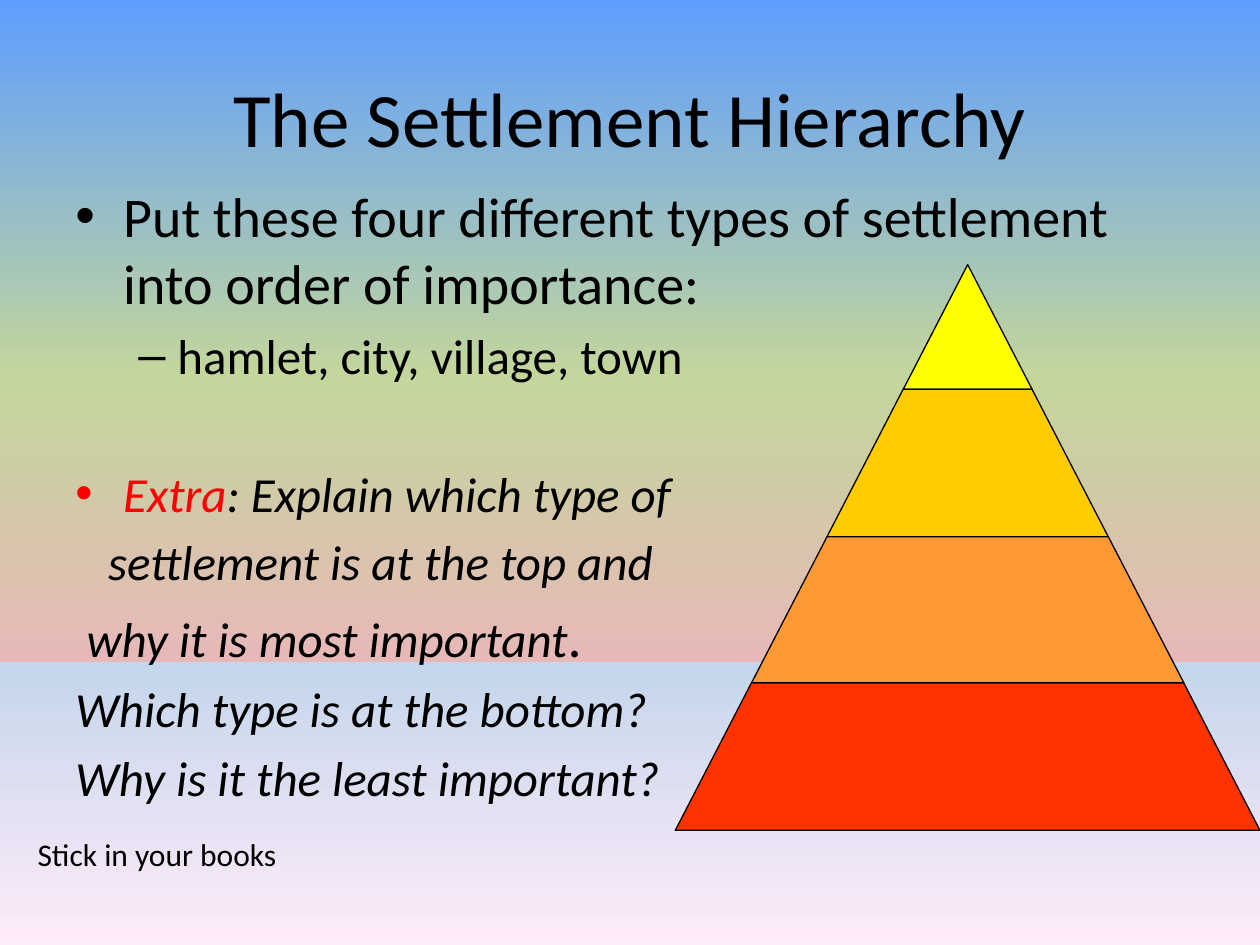
"""Build the settlement hierarchy slide with its task list and pyramid."""
from dataclasses import dataclass
from itertools import pairwise

from pptx import Presentation
from pptx.dml.color import RGBColor
from pptx.enum.text import MSO_ANCHOR, PP_ALIGN
from pptx.oxml.ns import qn
from pptx.util import Inches, Pt
from lxml.etree import SubElement


@dataclass(frozen=True)
class Theme:
    font: str = "Calibri"
    bullet_font: str = "Arial"
    ink: str = "000000"
    accent: str = "FF0000"
    title: int = 44
    body: int = 32
    sub: int = 28
    note: int = 18
    line: float = 0.75
    sky: tuple = ((0, "5E9EFF"), (40, "C3D69B"), (70, "E6B9B8"),
                  (70, "C4D6EB"), (100, "FFEBFA"))
    tiers: tuple = ("FFFF00", "FFCC00", "FF9933", "FF3300")


T = Theme()


@dataclass(frozen=True)
class Run:
    text: str
    size: int = T.sub
    italic: bool = False
    color: str = T.ink


@dataclass(frozen=True)
class Para:
    runs: tuple[Run, ...]
    bullet: str = ""
    level: int = 0
    margin: float = 0.38
    indent: float = -0.38
    before: float = 0.2 * T.sub


BODY = (
    Para((Run("Put these four different types of settlement into order of importance:",
              T.body),), "•", before=0.2 * T.body),
    Para((Run("hamlet, city, village, town"),), "–", 1, 0.81, -0.31),
    Para((Run("Extra", italic=True, color=T.accent),
          Run(": Explain which type of", italic=True)), "•", before=45),
    Para((Run("settlement is at the top and", italic=True),), indent=-0.12),
    Para((Run("why it is most important", italic=True), Run(".", T.body)),
         indent=-0.29, before=0.2 * T.body),
    Para((Run("Which type is at the bottom?", italic=True),)),
    Para((Run("Why is it the least important?", italic=True),)),
)


def paint_background(s) -> None:
    fill = s.background.fill
    fill.gradient()
    fill.gradient_angle = 270
    stops = s._element.find(".//" + qn("a:gsLst"))
    for stop in list(stops):
        stops.remove(stop)
    for pos, color in T.sky:
        gs = SubElement(stops, qn("a:gs"), pos=str(pos * 1000))
        SubElement(gs, qn("a:srgbClr"), val=color)


def add_text_frame(s, left: float, top: float, width: float, height: float):
    box = s.shapes.add_textbox(Inches(left), Inches(top), Inches(width), Inches(height))
    tf = box.text_frame
    tf.word_wrap = True
    return tf


def add_run(p, run: Run) -> None:
    r = p.add_run()
    r.text = run.text
    r.font.name = T.font
    r.font.size = Pt(run.size)
    r.font.italic = run.italic
    r.font.color.rgb = RGBColor.from_string(run.color)


def write_para(p, para: Para) -> None:
    p.level = para.level
    p.space_before = Pt(para.before)
    pPr = p._p.get_or_add_pPr()
    pPr.set("marL", str(Inches(para.margin)))
    pPr.set("indent", str(Inches(para.indent)))
    if para.bullet:
        SubElement(pPr, qn("a:buFont"), typeface=T.bullet_font)
        SubElement(pPr, qn("a:buChar"), char=para.bullet)
    else:
        SubElement(pPr, qn("a:buNone"))
    for run in para.runs:
        add_run(p, run)


def add_pyramid(s, center: float, levels: tuple[float, ...], half_base: float) -> None:
    group = s.shapes.add_group_shape()
    apex, base = levels[0], levels[-1]

    def edge(y: float, side: int) -> tuple[int, int]:
        half = half_base * (y - apex) / (base - apex)
        return Inches(center + side * half), Inches(y)

    for (top, bottom), color in zip(pairwise(levels), T.tiers):
        fb = group.shapes.build_freeform(*edge(top, -1))
        fb.add_line_segments([edge(top, 1), edge(bottom, 1), edge(bottom, -1)], close=True)
        sp = fb.convert_to_shape()
        sp.shadow.inherit = False
        sp.fill.solid()
        sp.fill.fore_color.rgb = RGBColor.from_string(color)
        sp.line.color.rgb = RGBColor.from_string(T.ink)
        sp.line.width = Pt(T.line)


def main() -> None:
    prs = Presentation()
    prs.slide_width, prs.slide_height = Inches(10), Inches(7.5)
    s = prs.slides.add_slide(prs.slide_layouts[6])
    paint_background(s)

    tf = add_text_frame(s, 0.5, 0.3, 9, 1.25)
    tf.vertical_anchor = MSO_ANCHOR.MIDDLE
    p = tf.paragraphs[0]
    p.alignment = PP_ALIGN.CENTER
    add_run(p, Run("The Settlement Hierarchy", T.title))

    tf = add_text_frame(s, 0.5, 1.39, 9, 5.31)
    for i, para in enumerate(BODY):
        write_para(tf.add_paragraph() if i else tf.paragraphs[0], para)

    add_pyramid(s, 7.68, (2.1, 3.09, 4.26, 5.42, 6.59), 2.32)

    tf = add_text_frame(s, 0.2, 6.58, 2.2, 0.4)
    add_run(tf.paragraphs[0], Run("Stick in your books", T.note))
    prs.save("out.pptx")


if __name__ == "__main__":
    main()
